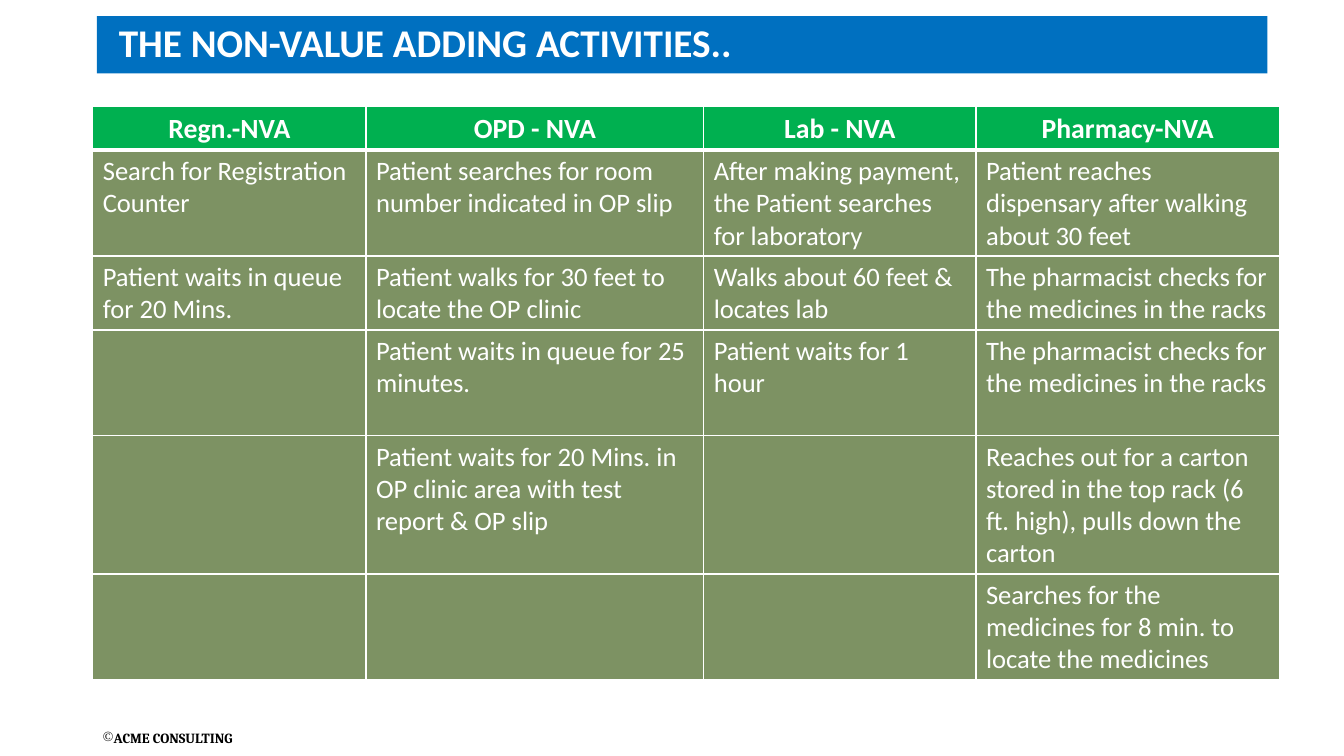
from dataclasses import dataclass

from lxml import etree
from pptx import Presentation
from pptx import util as u
from pptx.dml.color import RGBColor
from pptx.enum import shapes, text
from pptx.oxml.ns import qn

COLUMNS, ROWS = 1333, 750
CELL = u.Inches(0.01)


@dataclass(frozen=True)
class Theme:
    banner: str = "0070C0"
    header: str = "00B050"
    body: str = "7D9263"
    light: str = "FFFFFF"
    dark: str = "000000"
    font: str = "Calibri"
    footer_font: str = "Cambria"
    title_size: float = 28
    header_size: float = 19.8
    body_size: float = 19
    footer_size: float = 10
    thin: float = 1
    thick: float = 3


THEME = Theme()

ACTIVITIES = [
    ["Regn.-NVA", "OPD - NVA", "Lab - NVA", "Pharmacy-NVA"],
    ["Search for Registration Counter",
     "Patient searches for room number indicated in OP slip",
     "After making payment, the Patient searches for laboratory",
     "Patient reaches dispensary after walking about 30 feet"],
    ["Patient waits in queue for 20 Mins.",
     "Patient walks for 30 feet to locate the OP clinic",
     "Walks about 60 feet & locates lab",
     "The pharmacist checks for the medicines in the racks"],
    ["", "Patient waits in queue for 25 minutes.", "Patient waits for 1 hour",
     "The pharmacist checks for the medicines in the racks"],
    ["", "Patient waits for 20 Mins. in OP clinic area with test report & OP slip", "",
     "Reaches out for a carton stored in the top rack (6 ft. high), pulls down the carton"],
    ["", "", "", "Searches for the medicines for 8 min. to locate the medicines"],
]
COLUMN_SPANS = [271, 335, 270, 301]
ROW_SPANS = [43, 105, 73, 105, 137, 105]


def grid(*cells):
    return [CELL * cell for cell in cells]


def write(frame, words, size, color=THEME.light, font=THEME.font, bold=False,
          align=text.PP_ALIGN.LEFT, bullet=None, wrap=True):
    frame.word_wrap = wrap
    paragraph = frame.paragraphs[0]
    paragraph.alignment = align
    if bullet:
        properties = paragraph._p.get_or_add_pPr()
        properties.set("marL", "0")
        properties.set("indent", "0")
        etree.SubElement(properties, qn("a:buChar")).set("char", bullet)
    run = paragraph.add_run()
    run.text = words
    run.font.name = font
    run.font.size = u.Pt(size)
    run.font.bold = bold
    run.font.color.rgb = RGBColor.from_string(color)


def draw_border(cell, side, width):
    line = etree.SubElement(cell._tc.get_or_add_tcPr(), qn(f"a:ln{side}"))
    line.set("w", str(u.Pt(width)))
    fill = etree.SubElement(line, qn("a:solidFill"))
    etree.SubElement(fill, qn("a:srgbClr")).set("val", THEME.light)


def add_banner(slide, left, top, width, height):
    banner = slide.shapes.add_shape(shapes.MSO_SHAPE.RECTANGLE, *grid(left, top, width, height))
    banner.shadow.inherit = False
    banner.fill.solid()
    banner.fill.fore_color.rgb = RGBColor.from_string(THEME.banner)
    banner.line.fill.background()
    title = slide.shapes.add_textbox(*grid(left + 12, top - 3, 637, height))
    write(title.text_frame, "THE NON-VALUE ADDING ACTIVITIES..", THEME.title_size,
          bold=True, wrap=False)


def add_activities(slide, left, top, width, height):
    frame = slide.shapes.add_table(len(ROW_SPANS), len(COLUMN_SPANS),
                                   *grid(left, top, width, height))
    table = frame.table
    for column, span in zip(table.columns, COLUMN_SPANS):
        column.width = CELL * span
    for row, span in zip(table.rows, ROW_SPANS):
        row.height = CELL * span
    for row_index, row in enumerate(ACTIVITIES):
        header = row_index == 0
        for column_index, words in enumerate(row):
            cell = table.cell(row_index, column_index)
            for side in "LRTB":
                heavy = (row_index, side) in [(0, "B"), (1, "T")]
                draw_border(cell, side, THEME.thick if heavy else THEME.thin)
            cell.fill.solid()
            cell.fill.fore_color.rgb = RGBColor.from_string(
                THEME.header if header else THEME.body)
            if words:
                write(cell.text_frame, words,
                      THEME.header_size if header else THEME.body_size, bold=header,
                      align=text.PP_ALIGN.CENTER if header else text.PP_ALIGN.LEFT)


def add_footer(slide, left, top, width, height):
    footer = slide.shapes.add_textbox(*grid(left, top, width, height))
    write(footer.text_frame, "ACME CONSULTING", THEME.footer_size, color=THEME.dark,
          font=THEME.footer_font, bold=True, bullet="©")


def main():
    presentation = Presentation()
    presentation.slide_width, presentation.slide_height = grid(COLUMNS, ROWS)
    slide = presentation.slides.add_slide(presentation.slide_layouts[6])
    add_footer(slide, 92, 719, 205, 27)
    add_banner(slide, 96, 16, 1161, 57)
    add_activities(slide, 92, 106, sum(COLUMN_SPANS), sum(ROW_SPANS))
    presentation.save("out.pptx")


if __name__ == "__main__":
    main()
